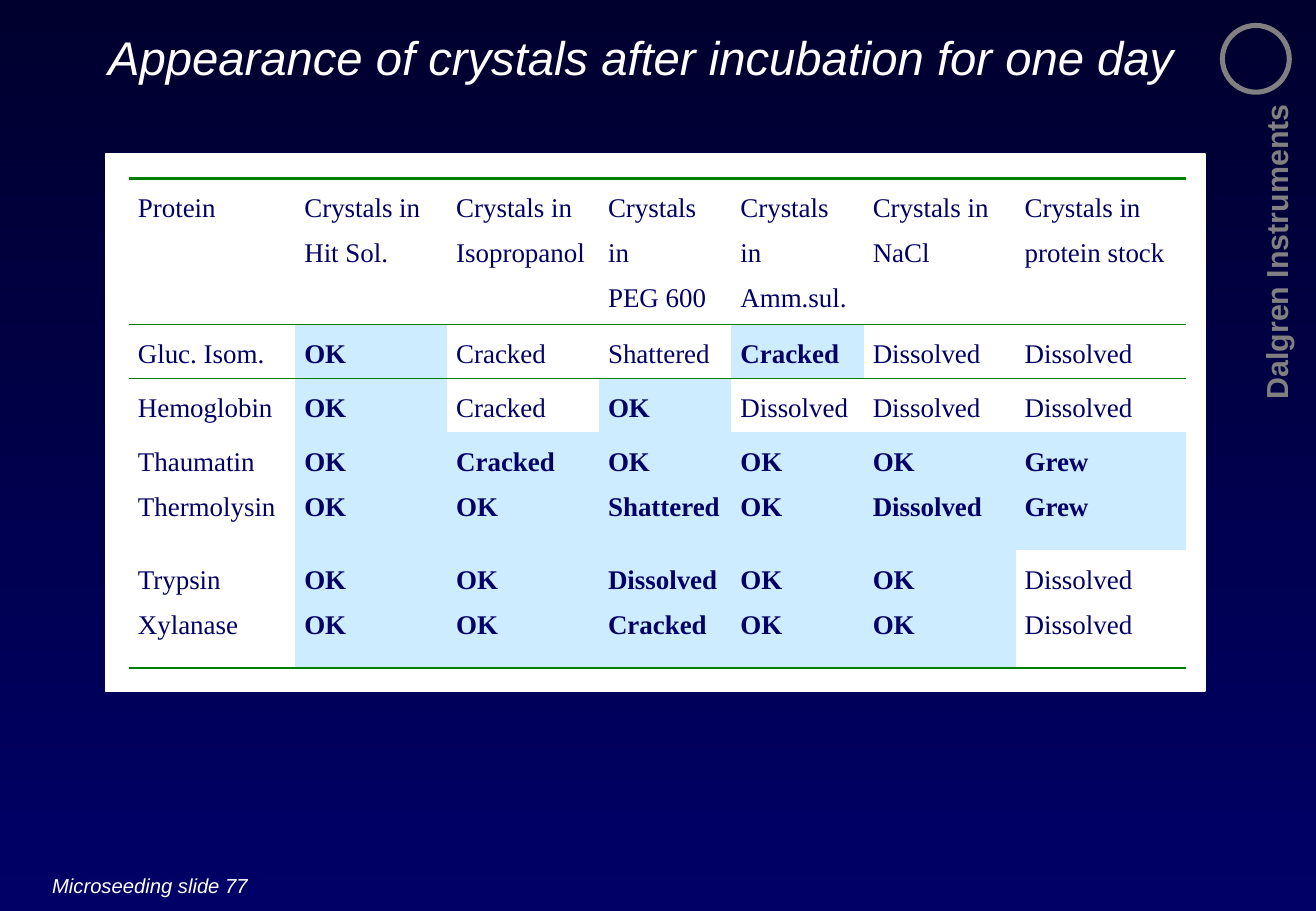
from lxml.etree import SubElement
from pptx import Presentation
from pptx.dml.color import RGBColor
from pptx.enum.shapes import MSO_SHAPE
from pptx.enum.text import MSO_ANCHOR, PP_ALIGN
from pptx.oxml.ns import qn
from pptx.util import Inches, Pt

WIDTH, HEIGHT = Inches(10.83), Inches(7.5)
COLORS = {
    "sky_top": "00002F", "sky_bottom": "000066", "white": "FFFFFF",
    "brand": "808080", "ink": "000066", "rule": "008000", "good": "CDECFF",
}
PLAIN_STYLE = "{2D5ABB26-0587-4C30-8999-92F81FD0307C}"

# Column widths and row heights in percent of the slide
COLUMNS = [12.65, 11.54, 11.54, 10.06, 10.06, 11.54, 12.99]
ROWS = [16, 5.93, 5.93, 12.93, 12.93]

# Cell texts, and the columns that are highlighted in each row
RESULTS = [
    (["Protein", "Crystals in Hit Sol.", "Crystals in Isopropanol",
      "Crystals in\nPEG 600", "Crystals in\nAmm.sul.", "Crystals in\nNaCl",
      "Crystals in protein stock"], ()),
    (["Gluc. Isom.", "OK", "Cracked", "Shattered", "Cracked", "Dissolved",
      "Dissolved"], (1, 4)),
    (["Hemoglobin", "OK", "Cracked", "OK", "Dissolved", "Dissolved",
      "Dissolved"], (1, 3)),
    (["Thaumatin\nThermolysin", "OK\nOK", "Cracked\nOK", "OK\nShattered",
      "OK\nOK", "OK\nDissolved", "Grew\nGrew"], range(1, 7)),
    (["Trypsin\nXylanase", "OK\nOK", "OK\nOK", "Dissolved\nCracked",
      "OK\nOK", "OK\nOK", "Dissolved\nDissolved"], range(1, 6)),
]
# Ruled edges of each row: edge tag and line width in points
RULES = {
    0: [("a:lnT", 1.5), ("a:lnB", 1)],
    1: [("a:lnT", 1)],
    4: [("a:lnB", 1.5)],
}


def color(name):
    return RGBColor.from_string(COLORS[name])


def across(percent):
    return round(WIDTH * percent / 100)


def down(percent):
    return round(HEIGHT * percent / 100)


def area(left, top, width, height):
    return across(left), down(top), across(width), down(height)


def add_span(para, text, size, ink, font="Arial", bold=False, italic=False):
    span = para.add_run()
    span.text = text
    span.font.name = font
    span.font.size = Pt(size)
    span.font.bold = bold
    span.font.italic = italic
    span.font.color.rgb = color(ink)


def add_label(page, place, text, size, ink, margins=True, wrap=True,
              align=PP_ALIGN.LEFT, **style):
    box = page.shapes.add_textbox(*area(*place))
    frame = box.text_frame
    frame.word_wrap = wrap
    frame.vertical_anchor = MSO_ANCHOR.MIDDLE
    if not margins:
        frame.margin_left = frame.margin_right = 0
        frame.margin_top = frame.margin_bottom = 0
    para = frame.paragraphs[0]
    para.alignment = align
    add_span(para, text, size, ink, **style)
    return box


def add_figure(page, kind, place, line, weight, fill=None):
    shape = page.shapes.add_shape(kind, *area(*place))
    shape.shadow.inherit = False
    if fill:
        shape.fill.solid()
        shape.fill.fore_color.rgb = color(fill)
    else:
        shape.fill.background()
    shape.line.color.rgb = color(line)
    shape.line.width = Pt(weight)


def rule_edge(cell, edge, weight):
    properties = cell._tc.get_or_add_tcPr()
    line = SubElement(properties, qn(edge), w=str(Pt(weight)))
    paint = SubElement(line, qn("a:solidFill"))
    SubElement(paint, qn("a:srgbClr"), val=COLORS["rule"])


def fill_cell(cell, text, highlighted):
    cell.margin_left = cell.margin_right = Pt(5.4)
    cell.margin_top = cell.margin_bottom = 0
    cell.fill.solid()
    cell.fill.fore_color.rgb = color("good" if highlighted else "white")
    frame = cell.text_frame
    for index, entry in enumerate(text.split("\n")):
        para = frame.add_paragraph() if index else frame.paragraphs[0]
        para.line_spacing = 1.5
        add_span(para, entry, 16, "ink", "Times New Roman", bold=highlighted)


def add_results(page, left, top):
    place = area(left, top, sum(COLUMNS), sum(ROWS))
    holder = page.shapes.add_table(len(ROWS), len(COLUMNS), *place)
    table = holder.table
    table.first_row = table.horz_banding = False
    for style in holder.element.iter(qn("a:tableStyleId")):
        style.text = PLAIN_STYLE
    for column, width in zip(table.columns, COLUMNS):
        column.width = across(width)
    for row, height in zip(table.rows, ROWS):
        row.height = down(height)
    for r, (texts, highlights) in enumerate(RESULTS):
        for c, text in enumerate(texts):
            cell = table.cell(r, c)
            for edge, weight in RULES.get(r, []):
                rule_edge(cell, edge, weight)
            fill_cell(cell, text, c in highlights)


def paint_background(page):
    fill = page.background.fill
    fill.gradient()
    fill.gradient_angle = 270
    for stop, name in zip(fill.gradient_stops, ("sky_top", "sky_bottom")):
        stop.color.rgb = color(name)


def main():
    deck = Presentation()
    deck.slide_width, deck.slide_height = WIDTH, HEIGHT
    page = deck.slides.add_slide(deck.slide_layouts[6])
    paint_background(page)

    # Brand strip and footer
    brand = add_label(page, (83.1, 27.47, 27.7, 5.33), "Dalgren Instruments",
                      18, "brand", align=PP_ALIGN.RIGHT, bold=True)
    brand.rotation = 270
    add_figure(page, MSO_SHAPE.OVAL, (92.89, 2.8, 5.08, 7.33), "brand", 3)
    add_label(page, (3.05, 95.2, 16.8, 4), "Microseeding slide 77",
              12, "white", wrap=False, italic=True)

    # Title
    add_label(page, (8.22, 3.2, 84, 6),
              "Appearance of crystals after incubation for one day",
              28, "white", margins=False, italic=True)

    # Results on a white panel
    add_figure(page, MSO_SHAPE.RECTANGLE, (8.03, 16.93, 83.56, 58.93),
               "white", 1, fill="white")
    add_results(page, 9.79, 19.6)

    deck.save("out.pptx")


if __name__ == "__main__":
    main()
